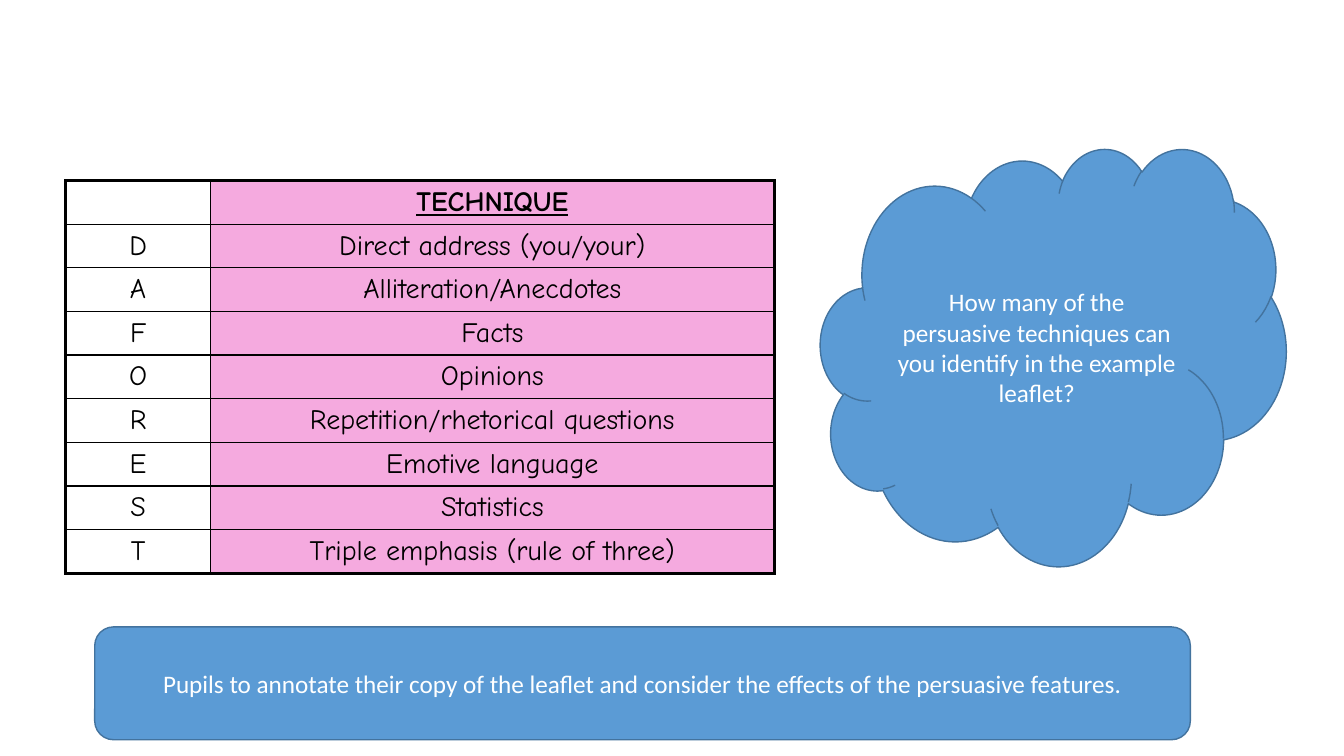
"""Build a slide with a table of persuasive techniques and two prompts."""
import dataclasses

import lxml.etree
import pptx
import pptx.dml.color
import pptx.enum.shapes
import pptx.enum.text
import pptx.oxml.ns
import pptx.presentation
import pptx.shapes.shapetree
import pptx.slide
import pptx.table
import pptx.text.text
import pptx.util

Pt = pptx.util.Pt
Kind = pptx.enum.shapes.MSO_SHAPE

COLORS = {
    "blue": "5B9BD5",
    "edge": "43739E",
    "pink": "F5AADF",
    "white": "FFFFFF",
    "black": "000000",
}
ROWS = [
    ("", "TECHNIQUE"),
    ("D", "Direct address (you/your)"),
    ("A", "Alliteration/Anecdotes"),
    ("F", "Facts"),
    ("O", "Opinions"),
    ("R", "Repetition/rhetorical questions"),
    ("E", "Emotive language"),
    ("S", "Statistics"),
    ("T", "Triple emphasis (rule of three)"),
]
WIDTHS = (103.7, 402.5)
HEIGHT = 31.2
THICK, THIN = 2.25, 1


@dataclasses.dataclass(frozen=True)
class Prompt:
    kind: Kind
    left: float
    top: float
    width: float
    height: float
    text: str


PROMPTS = [
    Prompt(Kind.CLOUD, 586.1, 105.8, 332.6, 298.1,
           "How many of the persuasive techniques can you identify in the example leaflet?"),
    Prompt(Kind.ROUNDED_RECTANGLE, 67.7, 447.8, 782.6, 80.6,
           "Pupils to annotate their copy of the leaflet and consider the effects "
           "of the persuasive features."),
]


def shade(name: str) -> pptx.dml.color.RGBColor:
    return pptx.dml.color.RGBColor.from_string(COLORS[name])


def style(frame: pptx.text.text.TextFrame, font: str, size: float, color: str) -> None:
    for para in frame.paragraphs:
        para.alignment = pptx.enum.text.PP_ALIGN.CENTER
        for run in para.runs:
            run.font.name = font
            run.font.size = Pt(size)
            run.font.color.rgb = shade(color)
            run.font.bold = False


def border(cell: pptx.table._Cell, sides: dict[str, float]) -> None:
    props = cell._tc.get_or_add_tcPr()
    name = pptx.oxml.ns.qn
    for side, width in sides.items():
        line = lxml.etree.SubElement(props, name(f"a:ln{side}"), w=str(Pt(width)))
        fill = lxml.etree.SubElement(line, name("a:solidFill"))
        lxml.etree.SubElement(fill, name("a:srgbClr"), val=COLORS["black"])


def draw_table(shapes: pptx.shapes.shapetree.SlideShapes) -> None:
    last = len(ROWS) - 1
    table = shapes.add_table(len(ROWS), len(WIDTHS), Pt(46.8), Pt(128.9),
                             Pt(sum(WIDTHS)), Pt(HEIGHT * len(ROWS))).table
    table.first_row = table.horz_banding = False
    for col, width in zip(table.columns, WIDTHS):
        col.width = Pt(width)
    for i, texts in enumerate(ROWS):
        table.rows[i].height = Pt(HEIGHT)
        for j, text in enumerate(texts):
            cell = table.cell(i, j)
            border(cell, {
                "L": THICK if j == 0 else THIN,
                "R": THICK if j == 1 else THIN,
                "T": THICK if i == 0 else THIN,
                "B": THICK if i == last else THIN,
            })
            cell.fill.solid()
            cell.fill.fore_color.rgb = shade("pink" if j else "white")
            cell.vertical_anchor = pptx.enum.text.MSO_ANCHOR.MIDDLE
            cell.text_frame.text = text
            style(cell.text_frame, "Comic Neue", 20, "black")
    head = table.cell(0, 1).text_frame.paragraphs[0].runs[0].font
    head.bold = head.underline = True


def draw_prompt(shapes: pptx.shapes.shapetree.SlideShapes, prompt: Prompt) -> None:
    shape = shapes.add_shape(prompt.kind, Pt(prompt.left), Pt(prompt.top),
                             Pt(prompt.width), Pt(prompt.height))
    shape.shadow.inherit = False
    shape.fill.solid()
    shape.fill.fore_color.rgb = shade("blue")
    shape.line.color.rgb = shade("edge")
    shape.line.width = Pt(1)
    frame = shape.text_frame
    frame.word_wrap = True
    frame.vertical_anchor = pptx.enum.text.MSO_ANCHOR.MIDDLE
    frame.text = prompt.text
    style(frame, "Calibri", 18, "white")


def main() -> None:
    deck = pptx.Presentation()
    deck.slide_width, deck.slide_height = Pt(960), Pt(540)
    slide = deck.slides.add_slide(deck.slide_layouts[6])
    draw_table(slide.shapes)
    for prompt in PROMPTS:
        draw_prompt(slide.shapes, prompt)
    deck.save("out.pptx")


if __name__ == "__main__":
    main()
